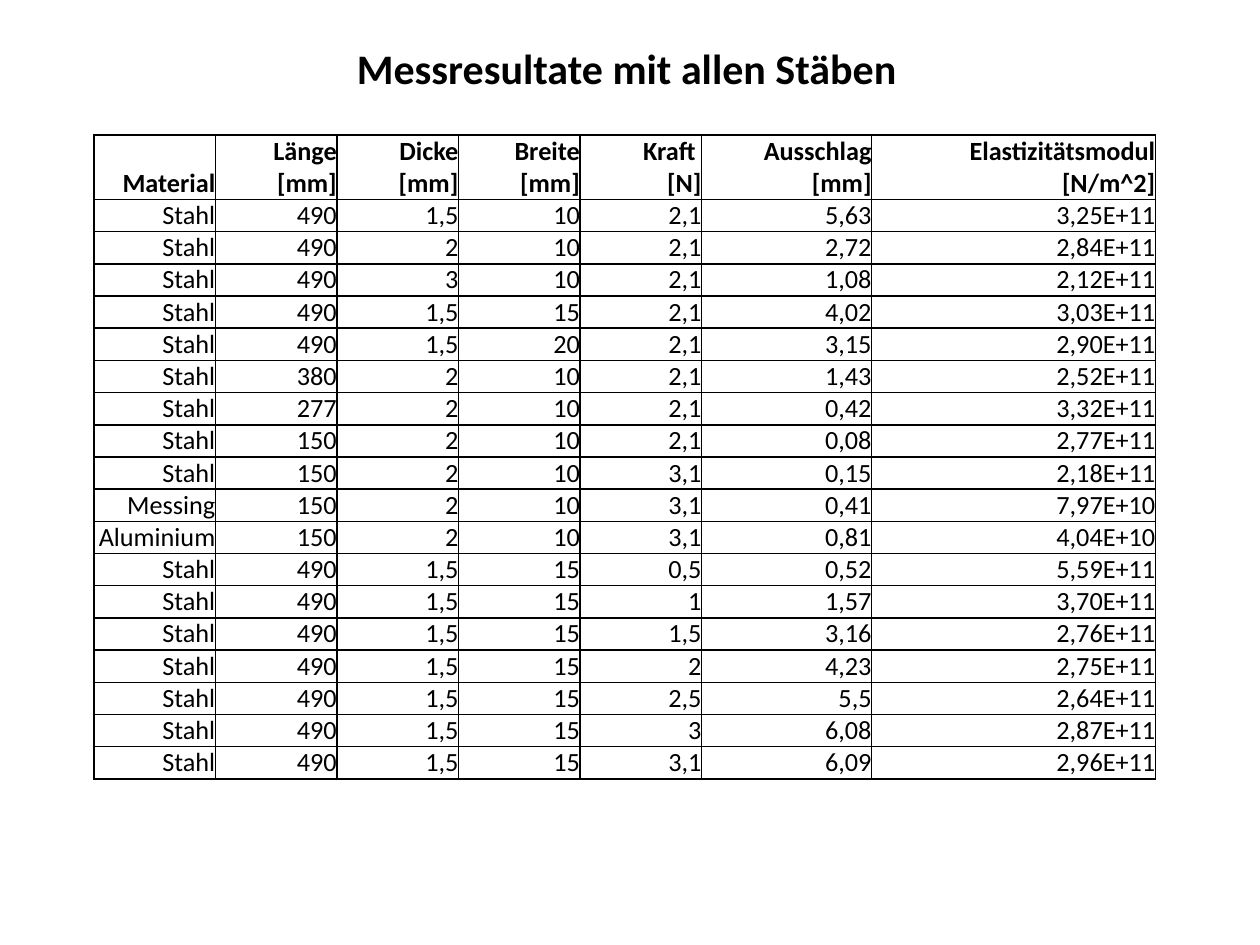
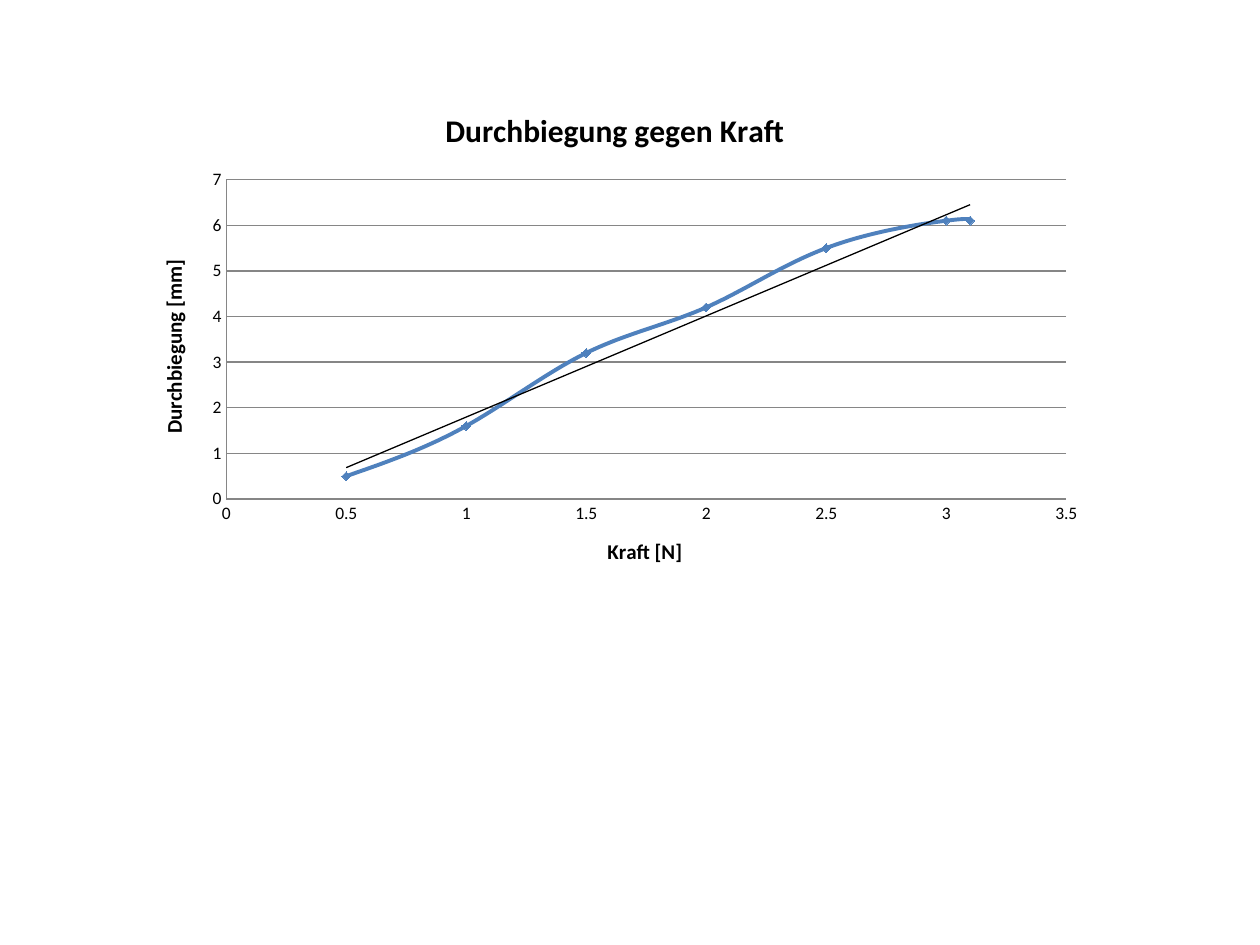
"""Builds two slides: a table of bending tests and a chart of deflection against force."""
from pptx import Presentation
from pptx.chart.data import XyChartData
from pptx.dml.color import RGBColor
from pptx.enum import chart as kinds, text
from pptx.oxml import parse_xml
from pptx.oxml.ns import nsdecls, qn
from pptx.util import Cm, Pt

FONT = "Calibri"
BLACK = RGBColor(0, 0, 0)
GREY = RGBColor(0x86, 0x86, 0x86)
BLUE = RGBColor(0x4F, 0x81, 0xBD)

TITLE = "Messresultate mit allen Stäben"
HEADS = ["Material", "Länge [mm]", "Dicke [mm]", "Breite [mm]",
         "Kraft \n[N]", "Ausschlag [mm]", "Elastizitätsmodul [N/m^2]"]
TESTS = [
    ("Stahl", "490", "1,5", "10", "2,1", "5,63", "3,25E+11"),
    ("Stahl", "490", "2", "10", "2,1", "2,72", "2,84E+11"),
    ("Stahl", "490", "3", "10", "2,1", "1,08", "2,12E+11"),
    ("Stahl", "490", "1,5", "15", "2,1", "4,02", "3,03E+11"),
    ("Stahl", "490", "1,5", "20", "2,1", "3,15", "2,90E+11"),
    ("Stahl", "380", "2", "10", "2,1", "1,43", "2,52E+11"),
    ("Stahl", "277", "2", "10", "2,1", "0,42", "3,32E+11"),
    ("Stahl", "150", "2", "10", "2,1", "0,08", "2,77E+11"),
    ("Stahl", "150", "2", "10", "3,1", "0,15", "2,18E+11"),
    ("Messing", "150", "2", "10", "3,1", "0,41", "7,97E+10"),
    ("Aluminium", "150", "2", "10", "3,1", "0,81", "4,04E+10"),
    ("Stahl", "490", "1,5", "15", "0,5", "0,52", "5,59E+11"),
    ("Stahl", "490", "1,5", "15", "1", "1,57", "3,70E+11"),
    ("Stahl", "490", "1,5", "15", "1,5", "3,16", "2,76E+11"),
    ("Stahl", "490", "1,5", "15", "2", "4,23", "2,75E+11"),
    ("Stahl", "490", "1,5", "15", "2,5", "5,5", "2,64E+11"),
    ("Stahl", "490", "1,5", "15", "3", "6,08", "2,87E+11"),
    ("Stahl", "490", "1,5", "15", "3,1", "6,09", "2,96E+11"),
]
WIDTHS = [2.45] * 5 + [3.43, 5.72]
HEAD, ROW = 1.3, 0.64

CHART = "Durchbiegung gegen Kraft"
POINTS = [(0.5, 0.5), (1, 1.6), (1.5, 3.2), (2, 4.2), (2.5, 5.5), (3, 6.1), (3.1, 6.1)]


def write(par, words, size, bold=False):
    run = par.add_run()
    run.text = words
    font = run.font
    font.name, font.size, font.bold = FONT, Pt(size), bold
    font.color.rgb = BLACK


def frame(cell):
    props = cell._tc.get_or_add_tcPr()
    for spot, side in enumerate("LRTB"):
        props.insert(spot, parse_xml(
            f'<a:ln{side} {nsdecls("a")} w="{Pt(1)}"><a:solidFill>'
            f'<a:srgbClr val="{BLACK}"/></a:solidFill></a:ln{side}>'))


def fill(cell, words, bold):
    cell.fill.background()
    frame(cell)
    cell.margin_left = cell.margin_right = cell.margin_top = cell.margin_bottom = 0
    cell.vertical_anchor = text.MSO_ANCHOR.BOTTOM
    body = cell.text_frame
    for spot, line in enumerate(words.split("\n")):
        par = body.add_paragraph() if spot else body.paragraphs[0]
        par.alignment = text.PP_ALIGN.RIGHT
        write(par, line, 15, bold)


def add_tests(deck):
    slide = deck.slides.add_slide(deck.slide_layouts[5])
    title = slide.shapes.title
    title.left, title.top, title.width, title.height = Cm(6.94), Cm(0.72), Cm(11.51), Cm(1.27)
    title.text_frame.word_wrap = False
    title.text_frame.vertical_anchor = text.MSO_ANCHOR.TOP
    par = title.text_frame.paragraphs[0]
    par.alignment = text.PP_ALIGN.LEFT
    write(par, TITLE, 24, True)

    rows = [HEADS] + TESTS
    grid = slide.shapes.add_table(len(rows), len(HEADS), Cm(1.89), Cm(2.72), Cm(sum(WIDTHS)),
                                  Cm(HEAD + ROW * len(TESTS))).table
    grid.first_row = grid.horz_banding = False
    for col, width in zip(grid.columns, WIDTHS):
        col.width = Cm(width)
    for top, row in enumerate(rows):
        grid.rows[top].height = Cm(ROW if top else HEAD)
        for left, words in enumerate(row):
            fill(grid.cell(top, left), words, top == 0)


def set_axis(axis, words, high, step):
    axis.minimum_scale, axis.maximum_scale, axis.major_unit = 0, high, step
    axis.major_tick_mark = axis.minor_tick_mark = kinds.XL_TICK_MARK.NONE
    axis.has_major_gridlines = False
    axis.tick_labels.number_format = "General"
    axis.tick_labels.number_format_is_linked = False
    axis.format.line.color.rgb = GREY
    write(axis.axis_title.text_frame.paragraphs[0], words, 12, True)


def add_trend(series):
    trend = parse_xml(
        f'<c:trendline {nsdecls("c", "a")}><c:spPr><a:ln w="{Pt(0.75)}"><a:solidFill>'
        f'<a:srgbClr val="{BLACK}"/></a:solidFill></a:ln></c:spPr>'
        '<c:trendlineType val="linear"/><c:dispRSqr val="0"/><c:dispEq val="0"/></c:trendline>')
    series._element.find(qn("c:xVal")).addprevious(trend)


def add_curve(deck):
    slide = deck.slides.add_slide(deck.slide_layouts[6])
    data = XyChartData()
    curve = data.add_series("Series 1")
    for force, bend in POINTS:
        curve.add_data_point(force, bend)
    chart = slide.shapes.add_chart(kinds.XL_CHART_TYPE.XY_SCATTER_SMOOTH, Cm(2.69), Cm(1.73),
                                   Cm(19.41), Cm(10.21), data).chart
    chart.has_legend = False
    chart.font.name, chart.font.size = FONT, Pt(10)
    chart.font.color.rgb = BLACK
    write(chart.chart_title.text_frame.paragraphs[0], CHART, 18, True)
    chart.plots[0].vary_by_categories = False
    set_axis(chart.category_axis, "Kraft [N]", 3.5, 0.5)
    set_axis(chart.value_axis, "Durchbiegung [mm]", 7, 1)
    chart.value_axis.major_gridlines.format.line.color.rgb = GREY

    series = chart.plots[0].series[0]
    series._element.get_or_add_smooth().val = True
    series.format.line.color.rgb = BLUE
    series.format.line.width = Pt(2.25)
    mark = series.marker
    mark.style, mark.size = kinds.XL_MARKER_STYLE.DIAMOND, 5
    mark.format.fill.solid()
    mark.format.fill.fore_color.rgb = BLUE
    mark.format.line.color.rgb = BLUE
    add_trend(series)


def main():
    deck = Presentation()
    deck.slide_width, deck.slide_height = Cm(25.4), Cm(19.05)
    add_tests(deck)
    add_curve(deck)
    deck.save("out.pptx")


if __name__ == "__main__":
    main()
